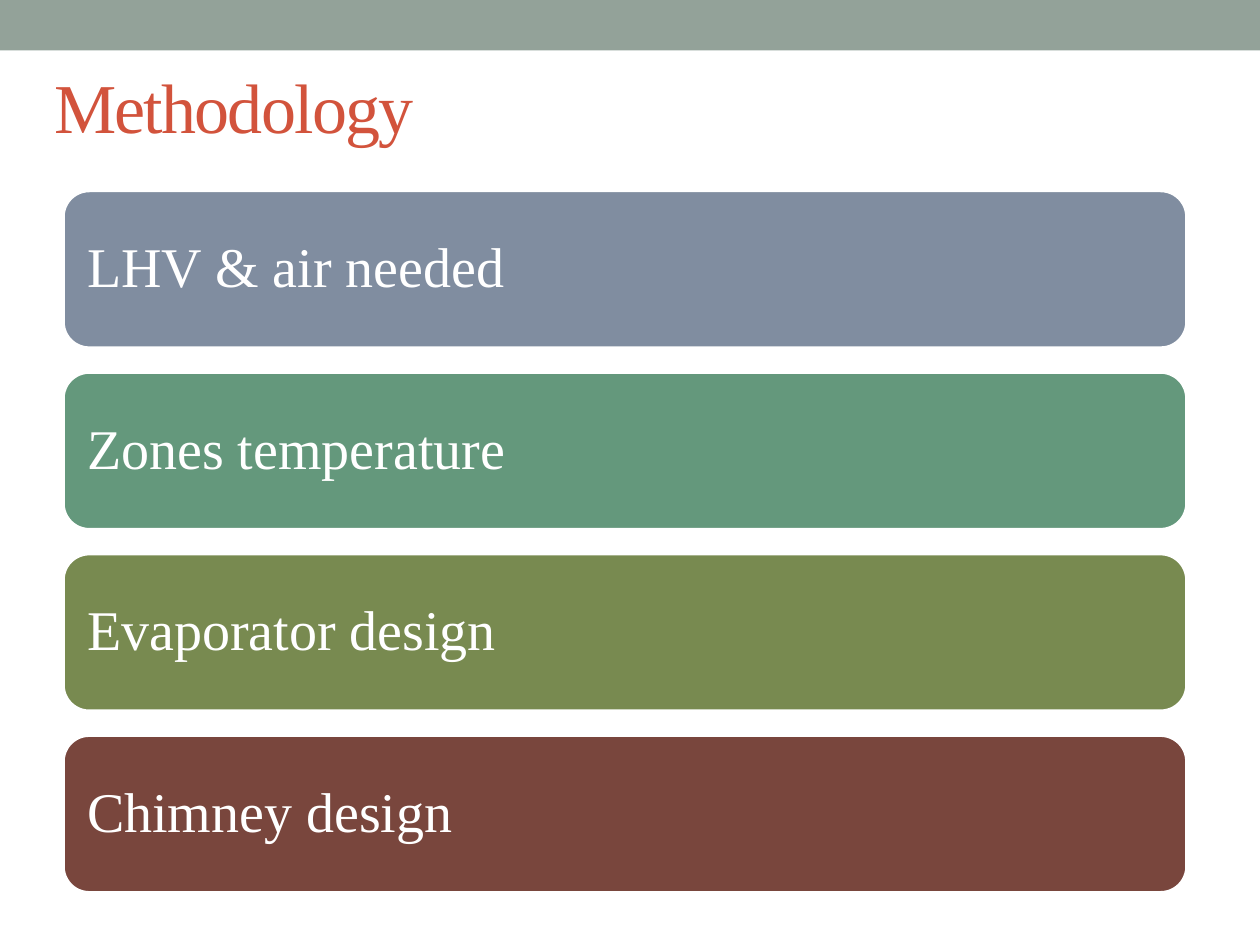
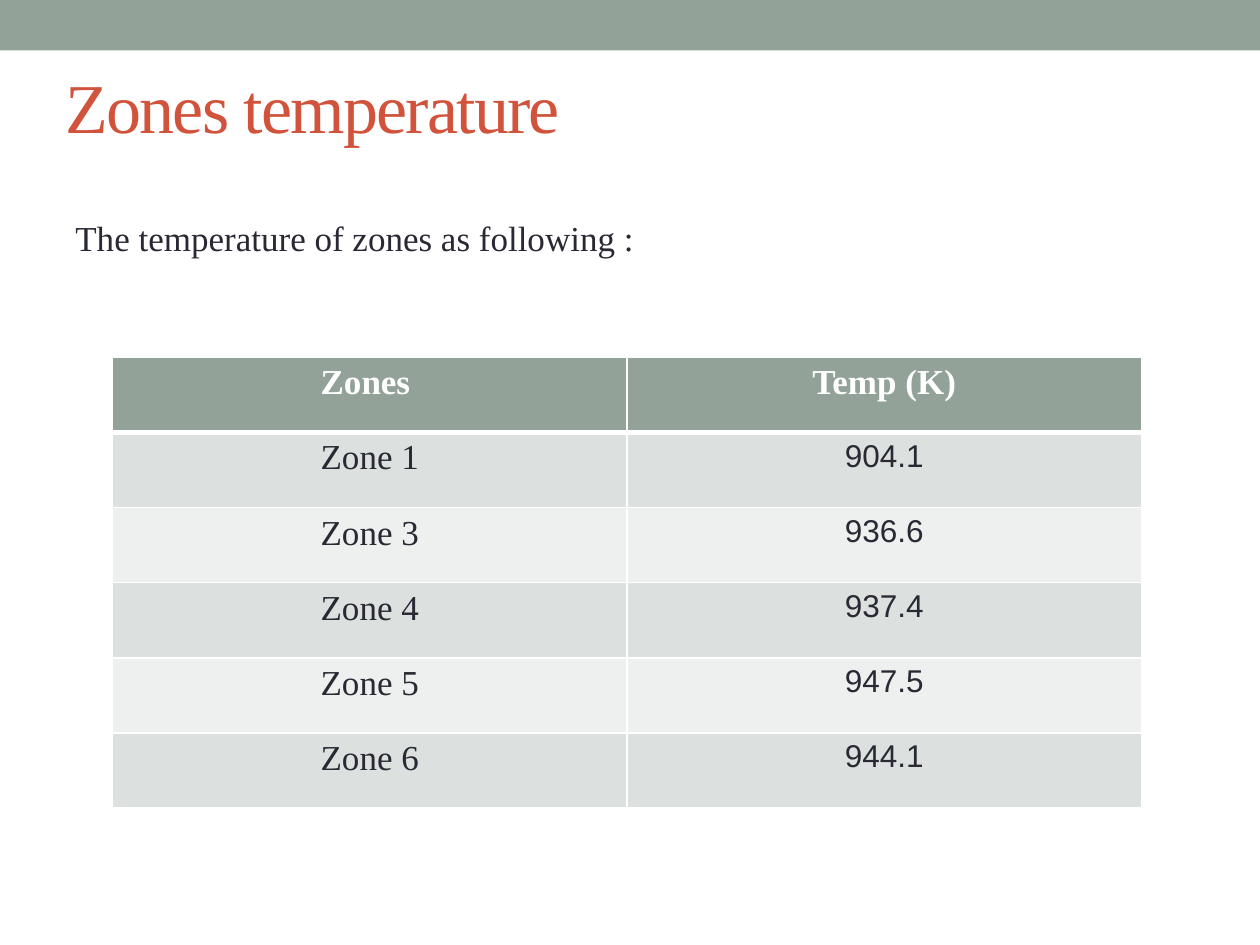
import pptx
import pptx.dml.color
import pptx.enum.shapes
import pptx.enum.text
import pptx.oxml
import pptx.oxml.ns
import pptx.util
from lxml import etree

Cm, Pt = pptx.util.Cm, pptx.util.Pt
SHAPE = pptx.enum.shapes.MSO_SHAPE
ALIGN = pptx.enum.text.PP_ALIGN
MIDDLE = pptx.enum.text.MSO_ANCHOR.MIDDLE
qn = pptx.oxml.ns.qn

# Shared look
SERIF, SANS = "Times New Roman", "Arial"
SAGE, RUST, INK, WHITE = "93A299", "D2533C", "292934", "FFFFFF"
STRIPES = ["DCE0DE", "EEF0EF"]

# Content
STEPS = [
    ("LHV & air needed", "808DA0"),
    ("Zones temperature", "64987C"),
    ("Evaporator design", "788A50"),
    ("Chimney design", "79463D"),
]
ZONES = [
    ("Zones ", "Temp (K)"),
    ("Zone 1", "904.1"),
    ("Zone 3", "936.6"),
    ("Zone 4", "937.4"),
    ("Zone 5", "947.5"),
    ("Zone 6", "944.1"),
]


def color(code):
    return pptx.dml.color.RGBColor.from_string(code)


def paint(item, code):
    item.fill.solid()
    item.fill.fore_color.rgb = color(code)


def write(frame, text, size, code, font=SERIF, bold=False, align=ALIGN.LEFT):
    """Set one paragraph of text and format it."""
    frame.text = text
    para = frame.paragraphs[0]
    para.alignment = align
    for run in para.runs:
        run.font.name = font
        run.font.size = Pt(size)
        run.font.bold = bold
        run.font.color.rgb = color(code)
    return para


def add_box(slide, kind, left, top, width, height, code):
    box = slide.shapes.add_shape(kind, Cm(left), Cm(top), Cm(width), Cm(height))
    box.shadow.inherit = False
    paint(box, code)
    box.line.fill.background()
    return box


def add_text(slide, text, left, top, width, height, size, code):
    box = slide.shapes.add_textbox(Cm(left), Cm(top), Cm(width), Cm(height))
    box.text_frame.word_wrap = True
    write(box.text_frame, text, size, code)
    return box


def add_slide(deck, title, left):
    """Start a slide with the top band and a tightly spaced title."""
    slide = deck.slides.add_slide(deck.slide_layouts[6])
    add_box(slide, SHAPE.RECTANGLE, 0, 0, 25.4, 1.02, SAGE)
    head = add_text(slide, title, left, 1.06, 22.86, 2.12, 40, RUST)
    head.text_frame.vertical_anchor = MIDDLE
    for props in head.element.iter(qn("a:rPr")):
        props.set("spc", "-100")
    return slide


def add_step(slide, text, top, code):
    bar = add_box(slide, SHAPE.ROUNDED_RECTANGLE, 1.27, top, 22.66, 3.18, code)
    bar.line.color.rgb = color(WHITE)
    bar.line.width = Pt(2.08)
    frame = bar.text_frame
    frame.word_wrap = True
    frame.vertical_anchor = MIDDLE
    frame.margin_left = frame.margin_right = Cm(0.33)
    frame.margin_top = frame.margin_bottom = Cm(0.33)
    write(frame, text, 32, WHITE).line_spacing = 0.9


def add_edges(props, low):
    """Draw white cell borders; low is the bottom width in points."""
    widths = {"a:lnL": 1, "a:lnR": 1, "a:lnT": 1, "a:lnB": low}
    for spot, (tag, width) in enumerate(widths.items()):
        edge = etree.Element(qn(tag), w=str(Pt(width)))
        fill = etree.SubElement(edge, qn("a:solidFill"))
        etree.SubElement(fill, qn("a:srgbClr"), val=WHITE)
        props.insert(spot, edge)


def add_grid(slide, rows, left, top, width, height):
    count = len(rows[0])
    holder = slide.shapes.add_table(
        len(rows), count, Cm(left), Cm(top), Cm(width), Cm(height))
    grid = holder.table
    for r, row in enumerate(rows):
        for c, text in enumerate(row):
            cell = grid.cell(r, c)
            if r == 0:
                paint(cell, SAGE)
                style = (20, WHITE, SERIF, True)
            else:
                paint(cell, STRIPES[(r - 1) % 2])
                style = (18, INK, SANS) if c else (20, INK, SERIF)
            write(cell.text_frame, text, *style, align=ALIGN.CENTER)
    for spot, props in enumerate(holder.element.iter(qn("a:tcPr"))):
        add_edges(props, 3 if spot < count else 1)


def main():
    deck = pptx.Presentation()
    deck.slide_width, deck.slide_height = Cm(25.4), Cm(19.05)

    # Methodology: evenly stacked bars
    slide = add_slide(deck, "Methodology", 0.84)
    for spot, (text, code) in enumerate(STEPS):
        add_step(slide, text, 3.84 + spot * 3.66, code)

    # Zone temperatures: lead line and table
    slide = add_slide(deck, "Zones temperature", 1.07)
    add_grid(slide, ZONES, 2.27, 7.2, 20.74, 9.09)
    add_text(slide, "The temperature of zones as following :",
             1.27, 4.24, 21.8, 1.11, 20, INK)

    deck.save("out.pptx")


if __name__ == "__main__":
    main()
